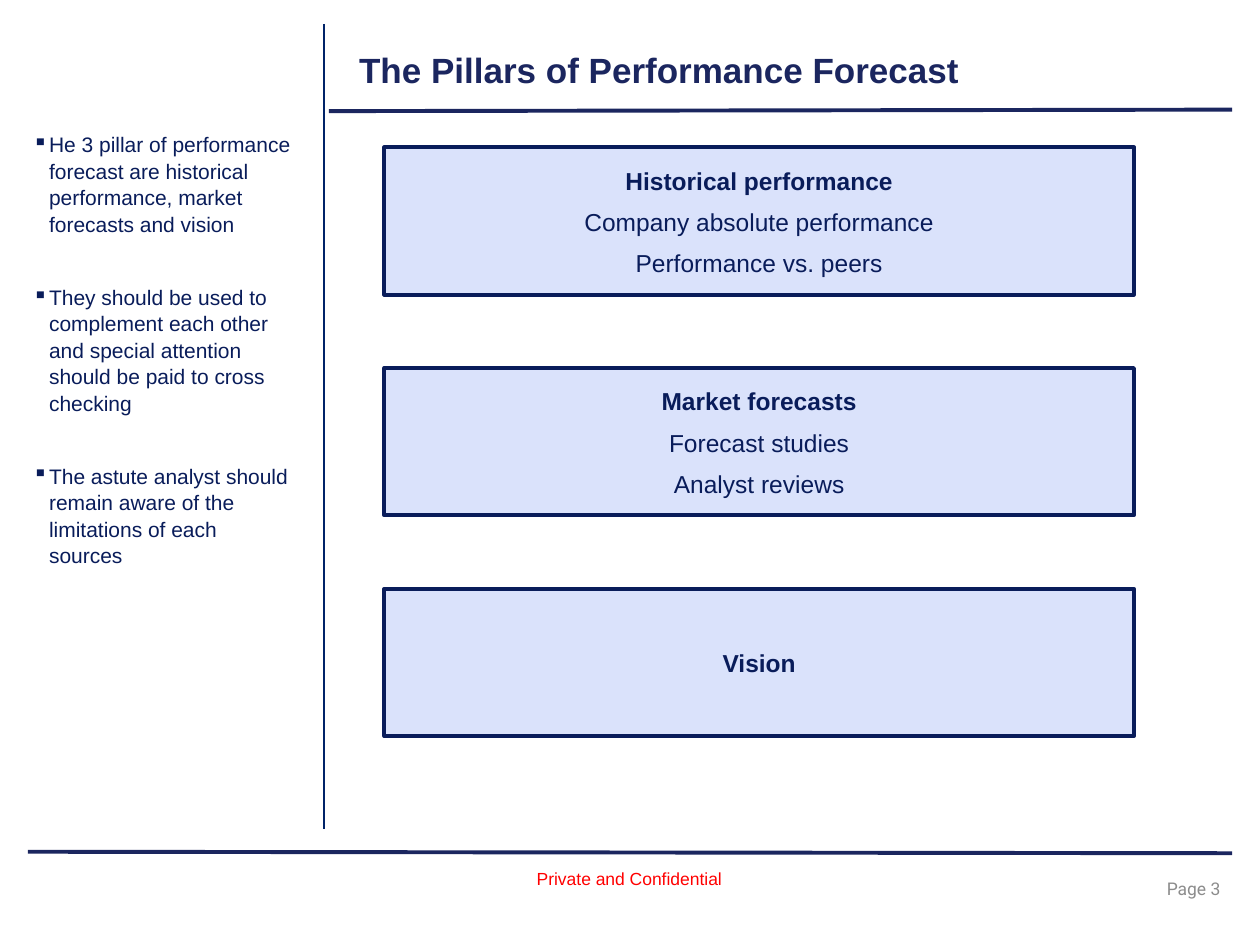
from dataclasses import dataclass

from lxml import etree
from pptx import Presentation
from pptx.dml.color import RGBColor
from pptx.enum.shapes import MSO_CONNECTOR, MSO_SHAPE
from pptx.enum.text import MSO_ANCHOR, PP_ALIGN
from pptx.oxml.ns import qn
from pptx.util import Cm, Pt

STRAIGHT = MSO_CONNECTOR.STRAIGHT
RECTANGLE = MSO_SHAPE.RECTANGLE
TOP, MIDDLE = MSO_ANCHOR.TOP, MSO_ANCHOR.MIDDLE
LEFT, CENTER, RIGHT = PP_ALIGN.LEFT, PP_ALIGN.CENTER, PP_ALIGN.RIGHT


@dataclass(frozen=True)
class Theme:
    font: str = "Arial"
    page_font: str = "Roboto"
    ink: str = "091C5A"
    heading: str = "1B265F"
    divider: str = "002368"
    panel: str = "DAE2FB"
    notice: str = "FF0000"
    muted: str = "8C8C8C"
    title_size: int = 20
    pillar_size: int = 14
    body_size: int = 12
    footer_size: int = 10
    thick: float = 2.25
    thin: float = 0.75
    line_spacing: float = 1.05


class SlideBuilder:
    def __init__(self, slide, theme):
        self.slide = slide
        self.theme = theme

    def rule(self, start, end, color, weight):
        line = self.slide.shapes.add_connector(
            STRAIGHT, *(Cm(value) for value in start + end))
        line.line.color.rgb = RGBColor.from_string(color)
        line.line.width = Pt(weight)
        etree.SubElement(line._element.spPr, qn("a:effectLst"))

    def style(self, para, size, color, bold=False, font=None, align=LEFT,
              spacing=None, after=0):
        para.alignment = align
        para.line_spacing = spacing or self.theme.line_spacing
        para.space_after = Pt(after)
        para.font.name = font or self.theme.font
        para.font.size = Pt(size)
        para.font.bold = bold
        para.font.color.rgb = RGBColor.from_string(color)

    def frame(self, place, anchor=TOP, wrap=True):
        box = self.slide.shapes.add_textbox(*(Cm(value) for value in place))
        box.text_frame.word_wrap = wrap
        box.text_frame.vertical_anchor = anchor
        return box.text_frame

    def label(self, text, place, size, color, anchor=TOP, wrap=True, **look):
        para = self.frame(place, anchor, wrap).paragraphs[0]
        para.text = text
        self.style(para, size, color, **look)

    def paragraphs(self, frame, texts):
        for index, text in enumerate(texts):
            para = frame.add_paragraph() if index else frame.paragraphs[0]
            para.text = text
            yield index, para

    def bullets(self, texts, place, indent, after):
        for _, para in self.paragraphs(self.frame(place), texts):
            properties = para._p.get_or_add_pPr()
            properties.set("marL", str(Cm(indent)))
            properties.set("indent", str(-Cm(indent)))
            etree.SubElement(properties, qn("a:buChar"), char="▪")
            self.style(para, self.theme.body_size, self.theme.ink, after=after)

    def pillar(self, texts, place):
        theme = self.theme
        box = self.slide.shapes.add_shape(
            RECTANGLE, *(Cm(value) for value in place))
        box.shadow.inherit = False
        box.fill.solid()
        box.fill.fore_color.rgb = RGBColor.from_string(theme.panel)
        box.line.color.rgb = RGBColor.from_string(theme.ink)
        box.line.width = Pt(theme.thick)
        box.text_frame.word_wrap = True
        box.text_frame.vertical_anchor = MIDDLE
        for index, para in self.paragraphs(box.text_frame, texts):
            self.style(para, theme.pillar_size, theme.ink, bold=index == 0,
                       align=CENTER, after=6)


def main():
    deck = Presentation()
    deck.slide_width, deck.slide_height = Cm(25.4), Cm(19.05)
    theme = Theme()
    page = SlideBuilder(deck.slides.add_slide(deck.slide_layouts[6]), theme)

    # Footer
    page.rule((0.56, 17.17), (24.84, 17.2), theme.heading, theme.thick)
    page.label("Page 3", (19.02, 17.4, 5.83, 1.02), theme.footer_size,
               theme.muted, MIDDLE, font=theme.page_font, align=RIGHT)
    page.label("Private and Confidential", (10.57, 17.35, 4.27, 0.69),
               theme.footer_size, theme.notice, wrap=False)

    # Header and column divider
    page.rule((6.63, 2.24), (24.84, 2.21), theme.heading, theme.thick)
    page.rule((6.53, 0.48), (6.53, 2.18), theme.divider, theme.thin)
    page.rule((6.53, 0.64), (6.53, 16.71), theme.divider, theme.thin)
    page.label("The Pillars of Performance Forecast",
               (6.99, 0.76, 17.15, 1.35), theme.title_size, theme.heading,
               bold=True, spacing=1.1)

    # Key messages
    page.bullets([
        "He 3 pillar of performance forecast are historical performance, "
        "market forecasts and vision",
        "They should be used to complement each other and special attention "
        "should be paid to cross checking",
        "The astute analyst should remain aware of the limitations of each "
        "sources",
    ], (0.41, 2.51, 5.72, 13.67), indent=0.33, after=26.7)

    # Pillars
    pillars = [
        ["Historical performance", "Company absolute performance",
         "Performance vs. peers"],
        ["Market forecasts", "Forecast studies", "Analyst reviews"],
        ["Vision"],
    ]
    first_top, pitch = 2.97, 4.45
    for row, texts in enumerate(pillars):
        page.pillar(texts, (7.75, first_top + row * pitch, 15.11, 2.97))

    deck.save("out.pptx")


if __name__ == "__main__":
    main()
